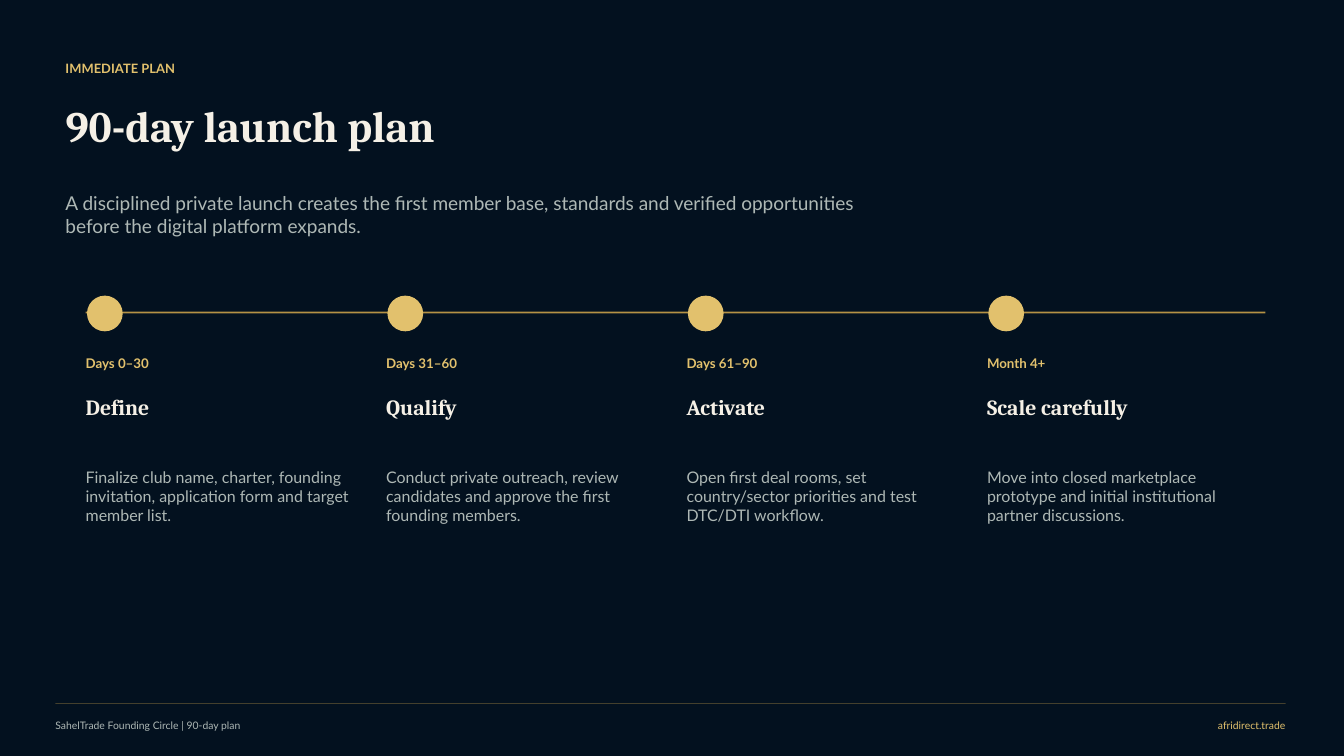
from lxml.etree import SubElement
from pptx import Presentation
from pptx.dml.color import RGBColor
from pptx.enum.shapes import MSO_CONNECTOR, MSO_SHAPE
from pptx.enum.text import MSO_ANCHOR, MSO_AUTO_SIZE, PP_ALIGN
from pptx.oxml.ns import qn
from pptx.util import Inches, Pt

COLORS = {"night": "03111F", "gold": "E2C16D", "bronze": "C9A14A",
          "cream": "F5F0E6", "mist": "AEB8B5"}

# Page grid, in inches
PAGE_WIDTH, PAGE_HEIGHT = 13.33, 7.5
HEAD_LEFT, HEAD_WIDTH = 0.65, 8.3
FOOT_LEFT, FOOT_RIGHT = 0.55, 12.75
FOOT_ROW, FOOT_HEIGHT = 7.12, 0.16
TRACK_LEFT, COLUMN_WIDTH, GUTTER = 0.85, 2.76, 0.22
TRACK_ROW, DOT_ROW, DOT_SIZE, DOT_INDENT = 3.1, 2.94, 0.34, 0.02
PHASE_ROWS = {"period": (3.46, 0.28), "phase": (3.79, 0.5), "detail": (4.37, 1.1)}

# Font name, size, bold, colour
STYLES = {
    "kicker": ("Lato", 9.2, True, "gold"),
    "title": ("Cambria", 31, True, "cream"),
    "lead": ("Lato", 13.6, False, "mist"),
    "period": ("Lato", 9.5, True, "gold"),
    "phase": ("Cambria", 15.5, True, "cream"),
    "detail": ("Lato", 11.4, False, "mist"),
    "footer": ("Lato", 7.4, False, "mist"),
    "site": ("Lato", 7.4, False, "gold"),
}

PHASES = [
    ("Days 0–30", "Define",
     "Finalize club name, charter, founding invitation, application form and target member list."),
    ("Days 31–60", "Qualify",
     "Conduct private outreach, review candidates and approve the first founding members."),
    ("Days 61–90", "Activate",
     "Open first deal rooms, set country/sector priorities and test DTC/DTI workflow."),
    ("Month 4+", "Scale carefully",
     "Move into closed marketplace prototype and initial institutional partner discussions."),
]


def color(name):
    return RGBColor.from_string(COLORS[name])


def column_left(index):
    return TRACK_LEFT + index * (COLUMN_WIDTH + GUTTER)


def write(box, text, style, anchor=MSO_ANCHOR.MIDDLE, align=PP_ALIGN.LEFT):
    """Fill a text box or placeholder with one styled paragraph."""
    frame_format = {"word_wrap": True, "auto_size": MSO_AUTO_SIZE.NONE,
                    "vertical_anchor": anchor, "margin_left": 0, "margin_right": 0,
                    "margin_top": 0, "margin_bottom": 0}
    for name, value in frame_format.items():
        setattr(box.text_frame, name, value)
    para = box.text_frame.paragraphs[0]
    para.alignment = align
    span = para.add_run()
    span.text = text
    font_name, size, bold, color_name = STYLES[style]
    for name, value in {"name": font_name, "size": Pt(size), "bold": bold}.items():
        setattr(span.font, name, value)
    span.font.color.rgb = color(color_name)


def add_text(page, area, text, style, **layout):
    box = page.shapes.add_textbox(*map(Inches, area))
    write(box, text, style, **layout)


def add_title(page, area, text):
    title = page.shapes.title
    for name, value in zip(("left", "top", "width", "height"), area):
        setattr(title, name, Inches(value))
    write(title, text, "title")


def add_rule(page, left, right, row, width, opacity):
    """Draw a level bronze line; opacity is a percentage."""
    rule = page.shapes.add_connector(
        MSO_CONNECTOR.STRAIGHT, *map(Inches, (left, row, right, row)))
    rule.line.width = Pt(width)
    rule.line.color.rgb = color("bronze")
    properties = rule._element.spPr
    tint = properties.find(".//" + qn("a:srgbClr"))
    SubElement(tint, qn("a:alpha"), val=str(opacity * 1000))
    SubElement(properties, qn("a:effectLst"))


def add_dot(page, left):
    dot = page.shapes.add_shape(
        MSO_SHAPE.OVAL, *map(Inches, (left, DOT_ROW, DOT_SIZE, DOT_SIZE)))
    dot.shadow.inherit = False
    dot.fill.solid()
    dot.fill.fore_color.rgb = color("gold")
    dot.line.color.rgb = color("gold")
    dot.line.width = Pt(1)


def add_phase(page, index, texts):
    left = column_left(index)
    add_dot(page, left + DOT_INDENT)
    for (style, (row, height)), text in zip(PHASE_ROWS.items(), texts):
        add_text(page, (left, row, COLUMN_WIDTH, height), text, style)


def main():
    deck = Presentation()
    deck.slide_width, deck.slide_height = Inches(PAGE_WIDTH), Inches(PAGE_HEIGHT)
    page = deck.slides.add_slide(deck.slide_layouts.get_by_name("Title Only"))
    page.background.fill.solid()
    page.background.fill.fore_color.rgb = color("night")

    # Heading
    add_text(page, (HEAD_LEFT, 0.55, HEAD_WIDTH, 0.25), "IMMEDIATE PLAN", "kicker")
    add_title(page, (HEAD_LEFT, 0.88, HEAD_WIDTH, 0.72), "90-day launch plan")
    add_text(page, (HEAD_LEFT, 1.9, HEAD_WIDTH, 0.52),
             "A disciplined private launch creates the first member base, standards and "
             "verified opportunities before the digital platform expands.",
             "lead", anchor=MSO_ANCHOR.TOP)

    # Timeline
    track_right = column_left(len(PHASES) - 1) + COLUMN_WIDTH
    add_rule(page, TRACK_LEFT, track_right, TRACK_ROW, 1.1, 90)
    for index, texts in enumerate(PHASES):
        add_phase(page, index, texts)

    # Footer
    add_text(page, (FOOT_LEFT, FOOT_ROW, 5.6, FOOT_HEIGHT),
             "SahelTrade Founding Circle | 90-day plan", "footer")
    site_width = 2.45
    add_text(page, (FOOT_RIGHT - site_width, FOOT_ROW, site_width, FOOT_HEIGHT),
             "afridirect.trade", "site", align=PP_ALIGN.RIGHT)
    add_rule(page, FOOT_LEFT, FOOT_RIGHT, 6.98, 0.5, 32)

    deck.save("out.pptx")


if __name__ == "__main__":
    main()
